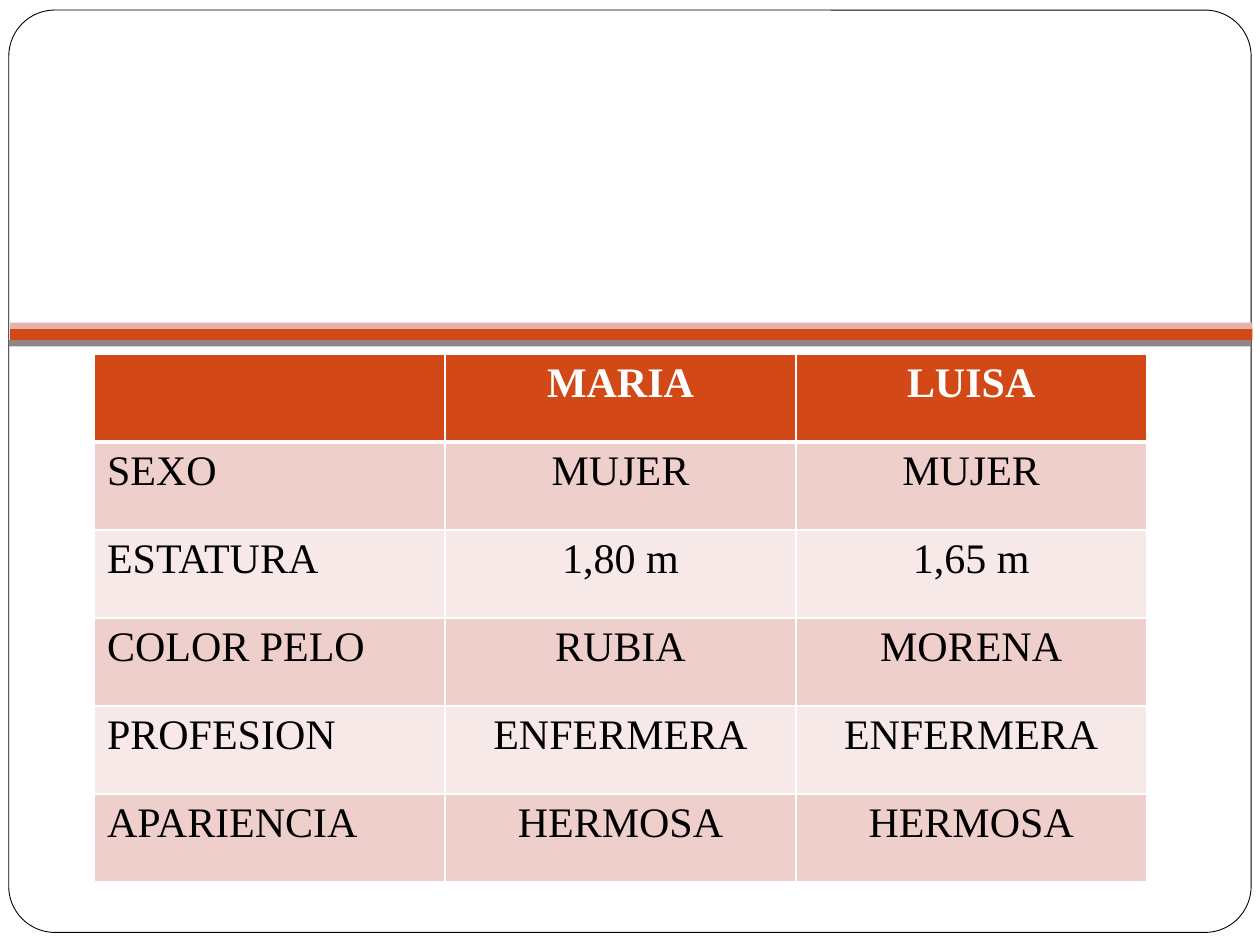
from lxml import etree
from pptx import Presentation
from pptx import util as u
from pptx.dml.color import RGBColor
from pptx.enum import shapes, text
from pptx.oxml import ns

WHITE = RGBColor(0xFF, 0xFF, 0xFF)
BLACK = RGBColor(0x00, 0x00, 0x00)
ORANGE = RGBColor(0xD3, 0x48, 0x17)
ROSE = RGBColor(0xE6, 0xB1, 0xAC)
GRAY = RGBColor(0x91, 0x84, 0x85)
DARK = RGBColor(0xEF, 0xCF, 0xCC)
LIGHT = RGBColor(0xF7, 0xE9, 0xE8)

ROWS = [
    ["", "MARIA", "LUISA"],
    ["SEXO", "MUJER", "MUJER"],
    ["ESTATURA", "1,80 m", "1,65 m"],
    ["COLOR PELO", "RUBIA", "MORENA"],
    ["PROFESION", "ENFERMERA", "ENFERMERA"],
    ["APARIENCIA", "HERMOSA", "HERMOSA"],
]


def px(n):
    """Turn px, 100 to the inch, into EMU."""
    return u.Emu(n * 9144)


class Page:
    font = "Times New Roman"
    size = u.Pt(24)

    def __init__(self, slide):
        self.slide = slide

    def box(self, kind, at, fill):
        shape = self.slide.shapes.add_shape(kind, *map(px, at))
        shape.shadow.inherit = False
        shape.fill.solid()
        shape.fill.fore_color.rgb = fill
        shape.line.fill.background()
        return shape

    def frame(self, at, round_by):
        shape = self.box(shapes.MSO_SHAPE.ROUNDED_RECTANGLE, at, WHITE)
        shape.adjustments[0] = round_by
        shape.line.color.rgb = BLACK
        shape.line.width = u.Pt(0.5)

    def band(self, at, fill):
        self.box(shapes.MSO_SHAPE.RECTANGLE, at, fill)

    def edges(self, cell, widths):
        """Draw white borders; widths maps a side (L, R, T, B) to points."""
        props = cell._tc.get_or_add_tcPr()
        for side, width in widths.items():
            line = etree.SubElement(props, ns.qn(f"a:ln{side}"), w=str(u.Pt(width)))
            fill = etree.SubElement(line, ns.qn("a:solidFill"))
            etree.SubElement(fill, ns.qn("a:srgbClr"), val=str(WHITE))

    def cell(self, cell, words, row, col):
        head = row == 0
        self.edges(cell, {"L": 1, "R": 1, "T": 3 if row == 1 else 1, "B": 3 if head else 1})
        cell.fill.solid()
        cell.fill.fore_color.rgb = ORANGE if head else (DARK if row % 2 else LIGHT)
        cell.text_frame.text = words
        para = cell.text_frame.paragraphs[0]
        para.alignment = text.PP_ALIGN.CENTER if col else text.PP_ALIGN.LEFT
        para.font.size = self.size
        for run in para.runs:
            run.font.name = self.font
            run.font.size = self.size
            run.font.bold = head
            run.font.color.rgb = WHITE if head else BLACK

    def table(self, at, rows):
        grid = self.slide.shapes.add_table(len(rows), len(rows[0]), *map(px, at)).table
        for r, row in enumerate(rows):
            for c, words in enumerate(row):
                self.cell(grid.cell(r, c), words, r, c)


def main():
    deck = Presentation()
    deck.slide_width, deck.slide_height = px(1000), px(750)
    page = Page(deck.slides.add_slide(deck.slide_layouts[6]))
    page.frame((7, 8, 986, 732), 0.05)
    page.band((8, 260, 986, 10), ORANGE)
    page.band((8, 256, 986, 5), ROSE)
    page.band((7, 270, 986, 5), GRAY)
    page.table((75, 281, 835, 419), ROWS)
    deck.save("out.pptx")


if __name__ == "__main__":
    main()
